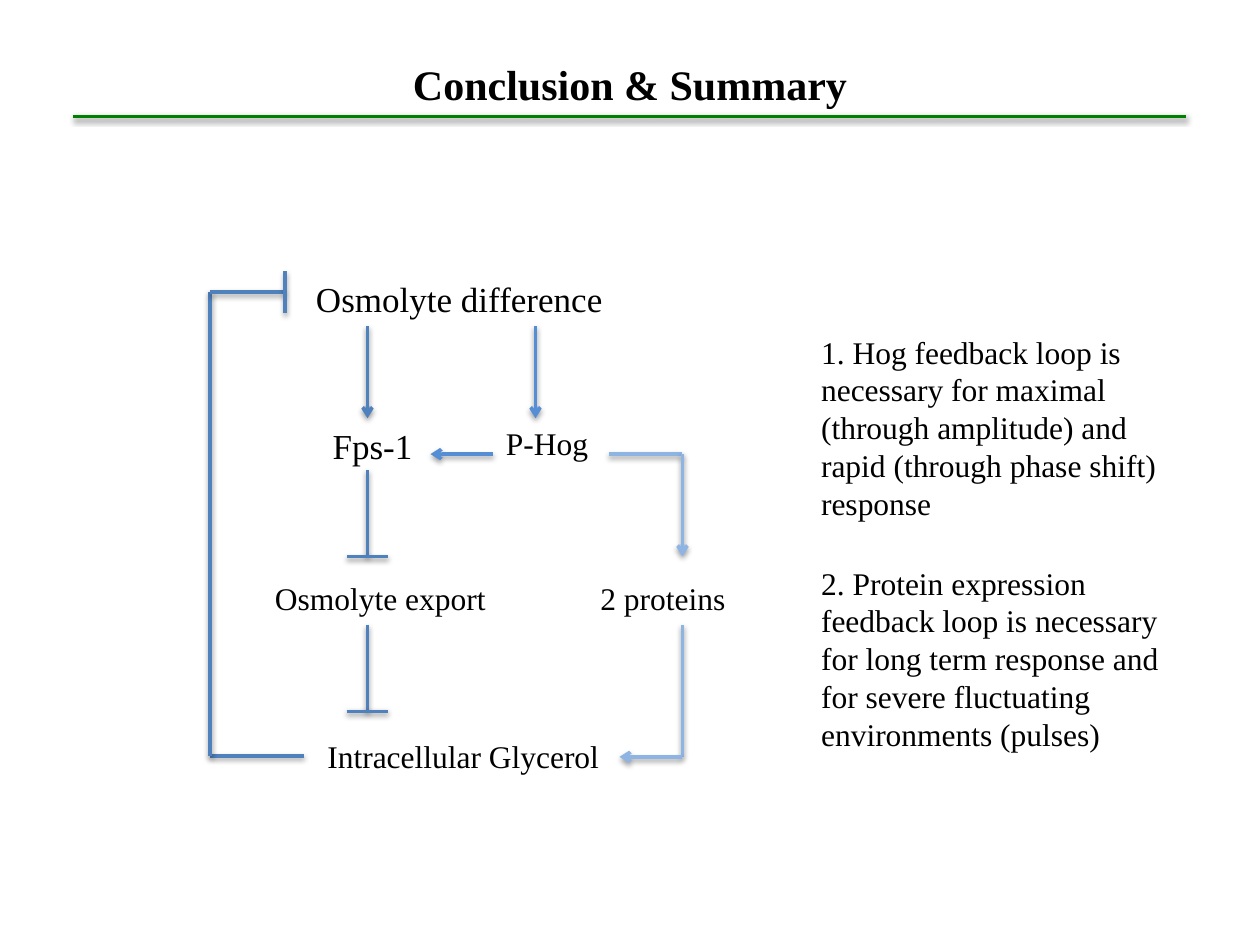
from lxml.etree import SubElement
from pptx import Presentation
from pptx.dml.color import RGBColor
from pptx.enum.shapes import MSO_CONNECTOR
from pptx.enum.text import MSO_ANCHOR, MSO_AUTO_SIZE, PP_ALIGN
from pptx.oxml.ns import qn
from pptx.util import Pt

TITLE = "Conclusion & Summary"
POINTS = [
    "1. Hog feedback loop is necessary for maximal (through amplitude) and rapid "
    "(through phase shift) response",
    "2. Protein expression feedback loop is necessary for long term response and "
    "for severe fluctuating environments (pulses)",
]
NODES = [
    ("Osmolyte difference", 173.5, 155, 246, 20),
    ("Osmolyte export", 150, 327.5, 204, 18),
    ("Fps-1", 183, 239, 138, 20),
    ("P-Hog", 282, 239, 138, 18),
    ("2 proteins", 336, 327.5, 132, 18),
    ("Intracellular Glycerol", 180, 417.5, 240, 18),
]
BLUE, MID, PALE, GREEN = "4F81BD", "558ED5", "8EB4E3", "008000"
LOOP, FPS, HOG, GENE = 120, 210, 306, 390
PATHS = [
    (BLUE, True, [(FPS, 186.5), (FPS, 239)]),
    (MID, True, [(HOG, 186.5), (HOG, 239)]),
    (MID, True, [(282, 259.5), (246, 259.5)]),
    (BLUE, False, [(174, 432), (LOOP, 432), (LOOP, 167), (163, 167)]),
    (BLUE, False, [(163, 155), (163, 179)]),
    (PALE, True, [(348, 259.5), (GENE, 259.5), (GENE, 318)]),
    (PALE, True, [(GENE, 357), (GENE, 432.5), (354, 432.5)]),
    (GREEN, False, [(42, 66.5), (678, 66.5)]),
]
for top, end in [(268.5, 318), (357, 406.5)]:
    PATHS += [(BLUE, False, [(FPS, top), (FPS, end)]),
              (BLUE, False, [(FPS - 12, end), (FPS + 12, end)])]


def paint(fmt, code):
    """Give a colour format its hex colour."""
    fmt.rgb = RGBColor.from_string(code)


def write(box, text, size=18, bold=False, align=PP_ALIGN.LEFT, color="000000"):
    """Fill a box with one formatted paragraph."""
    frame = box.text_frame
    frame.word_wrap = True
    frame.auto_size = MSO_AUTO_SIZE.NONE
    frame.vertical_anchor = MSO_ANCHOR.TOP
    par = frame.paragraphs[0]
    par.alignment = align
    par.space_before = Pt(0)
    run = par.add_run()
    run.text = text
    font = run.font
    font.name, font.size, font.bold = "Times New Roman", Pt(size), bold
    paint(font.color, color)


def place(box, left, top, width, height):
    """Move and size a placeholder."""
    box.left, box.top, box.width, box.height = map(Pt, (left, top, width, height))


def plain(box):
    """Take the bullet and indent off a body placeholder."""
    props = box.text_frame.paragraphs[0]._p.get_or_add_pPr()
    props.set("marL", "0")
    props.set("indent", "0")
    SubElement(props, qn("a:buNone"))


def link(slide, start, end, color, arrow):
    """Draw one shadowed line, with an arrowhead if asked."""
    line = slide.shapes.add_connector(MSO_CONNECTOR.STRAIGHT, *map(Pt, start + end))
    line.line.width = Pt(2)
    paint(line.line.color, color)
    if arrow:
        SubElement(line.line._get_or_add_ln(), qn("a:tailEnd"), type="arrow")
    effects = SubElement(line._element.spPr, qn("a:effectLst"))
    shade = SubElement(effects, qn("a:outerShdw"), blurRad=str(Pt(3.1)),
                       dist=str(Pt(1.6)), dir="5400000", rotWithShape="0")
    tint = SubElement(shade, qn("a:srgbClr"), val="000000")
    SubElement(tint, qn("a:alpha"), val="38000")


def main():
    """Build and save the slide."""
    deck = Presentation()
    deck.slide_width, deck.slide_height = Pt(720), Pt(540)
    slide = deck.slides.add_slide(deck.slide_layouts.get_by_name("Two Content"))
    title, *bodies = list(slide.placeholders)[:3]
    place(title, 42, 30, 636, 36)
    write(title, TITLE, size=24, bold=True, align=PP_ALIGN.CENTER)
    for row, (body, text) in enumerate(zip(bodies, POINTS)):
        place(body, 462, 186.5 + 132 * row, 216, 117)
        write(body, text)
        plain(body)
    for text, left, top, width, size in NODES:
        box = slide.shapes.add_textbox(*map(Pt, (left, top, width, size * 1.6)))
        write(box, text, size=size)
    for color, arrow, path in PATHS:
        for step, (start, end) in enumerate(zip(path, path[1:]), 2):
            link(slide, start, end, color, arrow and step == len(path))
    deck.save("out.pptx")


if __name__ == "__main__":
    main()
